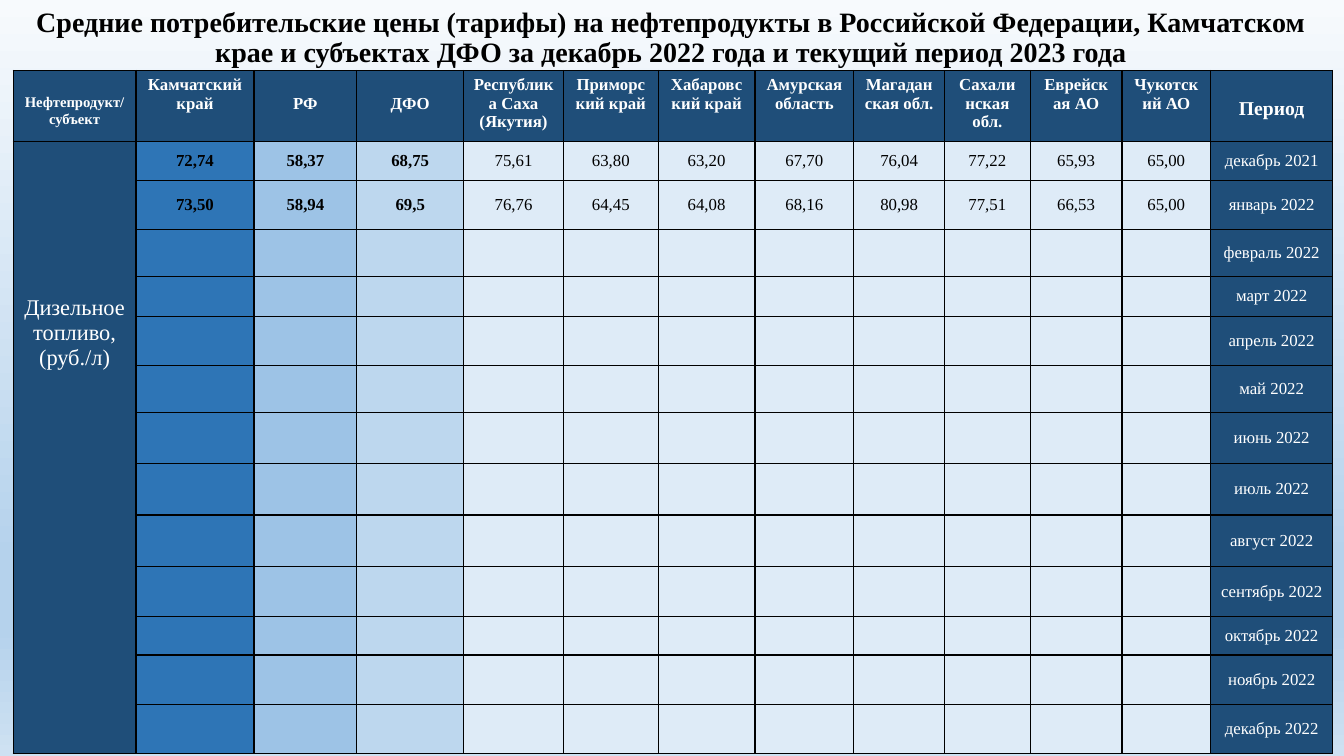
from lxml import etree
from pptx import Presentation
from pptx.dml.color import RGBColor
from pptx.enum.text import MSO_ANCHOR, MSO_AUTO_SIZE, PP_ALIGN
from pptx.oxml.ns import qn
from pptx.util import Inches, Pt

CENTER = PP_ALIGN.CENTER
TOP, MIDDLE = MSO_ANCHOR.TOP, MSO_ANCHOR.MIDDLE
NO_FIT = MSO_AUTO_SIZE.NONE

FONT = "Times New Roman"
COLORS = {"navy": "1F4E79", "blue": "2E75B6", "sky": "9DC3E6",
          "light": "BDD7EE", "pale": "DEEBF7",
          "black": "000000", "white": "FFFFFF"}
STOPS = [(0, "F7FAFD"), (74, "B5D2EC"), (83, "B5D2EC"), (100, "CEE1F2")]

TITLE = ("Средние потребительские цены (тарифы) на нефтепродукты в Российской "
         "Федерации, Камчатском крае и субъектах ДФО за декабрь 2022 года "
         "и текущий период 2023 года")
HEADS = ["Нефтепродукт/субъект", "Камчатский край", "РФ", "ДФО",
         "Республика Саха (Якутия)", "Приморский край", "Хабаровский край",
         "Амурская область", "Магаданская обл.", "Сахалинская обл.",
         "Еврейская АО", "Чукотский АО", "Период"]
FUEL = "Дизельное топливо,\n(руб./л)"
MONTHS = ["январь", "февраль", "март", "апрель", "май", "июнь", "июль",
          "август", "сентябрь", "октябрь", "ноябрь", "декабрь"]
PERIODS = ["декабрь 2021"] + [f"{month} 2022" for month in MONTHS]
PRICES = [
    ["72,74", "58,37", "68,75", "75,61", "63,80", "63,20", "67,70", "76,04",
     "77,22", "65,93", "65,00"],
    ["73,50", "58,94", "69,5", "76,76", "64,45", "64,08", "68,16", "80,98",
     "77,51", "66,53", "65,00"],
]
WIDTHS = [1.22, 1.17, 1.02, 1.06, 0.99, 0.94, 0.96, 0.98, 0.9, 0.85, 0.91,
          0.88, 1.21]
HEIGHTS = [0.7, 0.39, 0.49, 0.46, 0.4, 0.49, 0.46, 0.51, 0.51, 0.51, 0.5,
           0.38, 0.49, 0.49]
FILLS = ["navy", "blue", "sky", "light"] + ["pale"] * 8 + ["navy"]
# Column: (text size, top margin) of the headings set lower in their cells
LOW = {0: (10.5, 0.24), 2: (12, 0.24), 3: (12, 0.24), 12: (14, 0.27)}


def rgb(name):
    return RGBColor.from_string(COLORS[name])


def style(par, size, color, bold):
    par.alignment = CENTER
    form = {"name": FONT, "size": Pt(size), "bold": bold}
    for run in par.runs:
        for key, value in form.items():
            setattr(run.font, key, value)
        run.font.color.rgb = rgb(color)
    if not par.runs:
        # Keeps empty cells from stretching their rows
        etree.SubElement(par._p, qn("a:endParaRPr"), sz=str(int(size * 100)))


def edge(cell):
    props = cell._tc.get_or_add_tcPr()
    for pos, side in enumerate(("lnL", "lnR", "lnT", "lnB")):
        line = etree.Element(qn(f"a:{side}"), w=str(Pt(1)))
        solid = etree.SubElement(line, qn("a:solidFill"))
        etree.SubElement(solid, qn("a:srgbClr"), val=COLORS["black"])
        props.insert(pos, line)


def put(cell, text, fill, size=12, color="white", bold=False,
        anchor=MIDDLE, top=0.05):
    cell.text = text
    cell.vertical_anchor = anchor
    cell.margin_top = Inches(top)
    cell.fill.solid()
    cell.fill.fore_color.rgb = rgb(fill)
    edge(cell)
    for par in cell.text_frame.paragraphs:
        style(par, size, color, bold)


def backdrop(slide):
    fill = slide.background.fill
    fill.gradient()
    fill.gradient_angle = 270
    stops = slide.element.find(".//" + qn("a:gsLst"))
    for old in list(stops):
        stops.remove(old)
    for pos, color in STOPS:
        stop = etree.SubElement(stops, qn("a:gs"), pos=str(pos * 1000))
        etree.SubElement(stop, qn("a:srgbClr"), val=color)


def heading(slide, left, top, width, height):
    title = slide.shapes.title
    box = {"left": left, "top": top, "width": width, "height": height}
    for key, value in box.items():
        setattr(title, key, Inches(value))
    frame = title.text_frame
    frame.text = TITLE
    form = {"word_wrap": True, "auto_size": NO_FIT, "vertical_anchor": MIDDLE}
    for key, value in form.items():
        setattr(frame, key, value)
    par = frame.paragraphs[0]
    par.line_spacing = 0.9
    style(par, 20, "black", True)


def prices(slide, left, top):
    size = len(HEIGHTS), len(WIDTHS)
    box = [Inches(n) for n in (left, top, sum(WIDTHS), sum(HEIGHTS))]
    table = slide.shapes.add_table(*size, *box).table
    for col, width in zip(table.columns, WIDTHS):
        col.width = Inches(width)
    for row, height in zip(table.rows, HEIGHTS):
        row.height = Inches(height)

    # Heading row
    for col, text in enumerate(HEADS):
        points, space = LOW.get(col, (12, 0.05))
        put(table.cell(0, col), text, "navy", points, bold=True,
            anchor=TOP, top=space)

    # Prices and periods
    last = len(WIDTHS) - 1
    for row, period in enumerate(PERIODS, 1):
        values = PRICES[row - 1] if row <= len(PRICES) else [""] * (last - 1)
        for col, text in enumerate(values, 1):
            put(table.cell(row, col), text, FILLS[col], color="black",
                bold=col < 4)
        put(table.cell(row, last), period, FILLS[last])

    # Fuel name beside all periods
    for row in range(2, size[0]):
        put(table.cell(row, 0), "", "navy")
    fuel = table.cell(1, 0)
    fuel.merge(table.cell(size[0] - 1, 0))
    put(fuel, FUEL, "navy", 16, anchor=TOP, top=1.53)


def main():
    deck = Presentation()
    deck.slide_width, deck.slide_height = Inches(13.33), Inches(7.5)
    slide = deck.slides.add_slide(deck.slide_layouts[5])
    backdrop(slide)
    heading(slide, 0.2, 0.14, 12.91, 0.48)
    prices(slide, 0.13, 0.7)
    deck.save("out.pptx")


if __name__ == "__main__":
    main()
